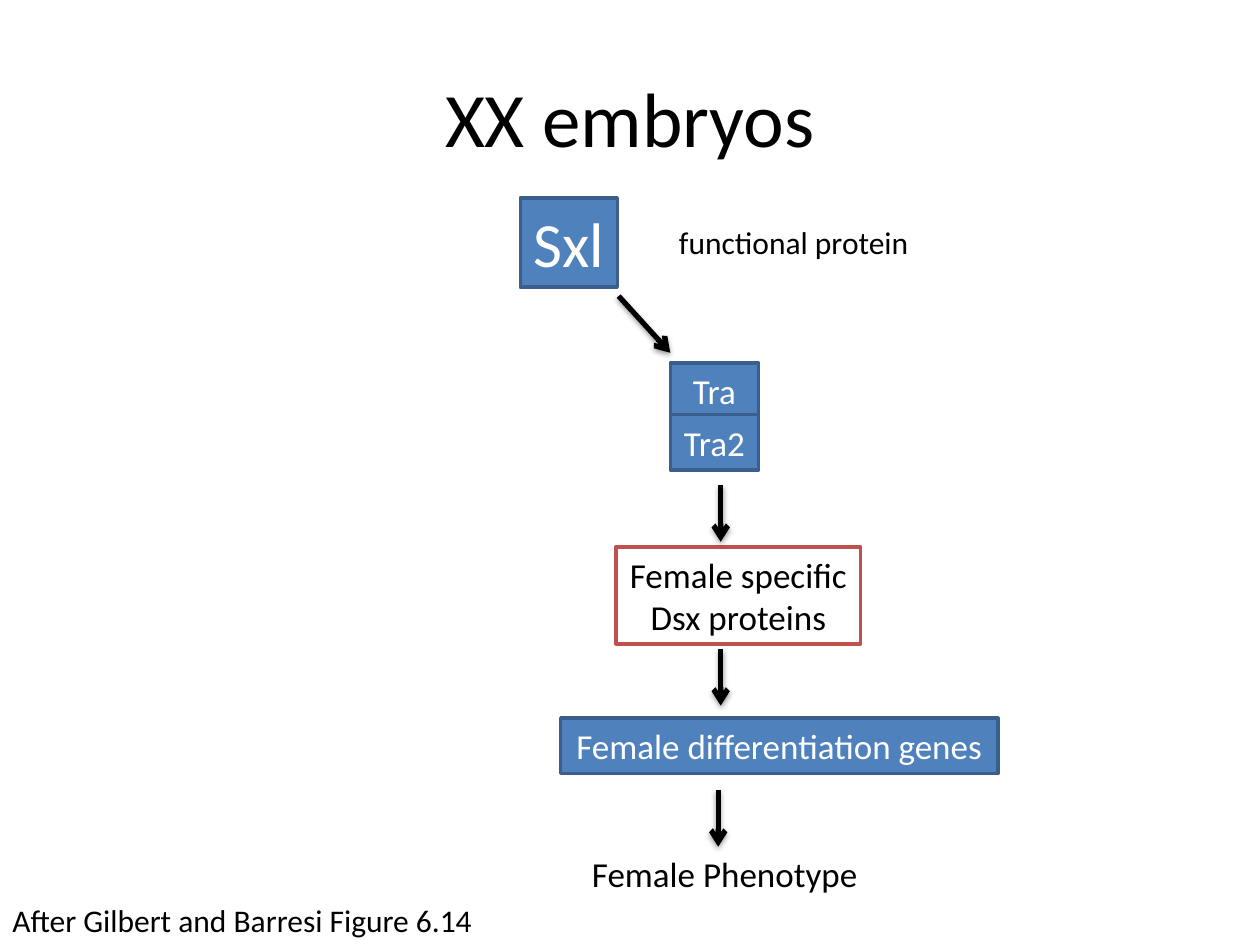
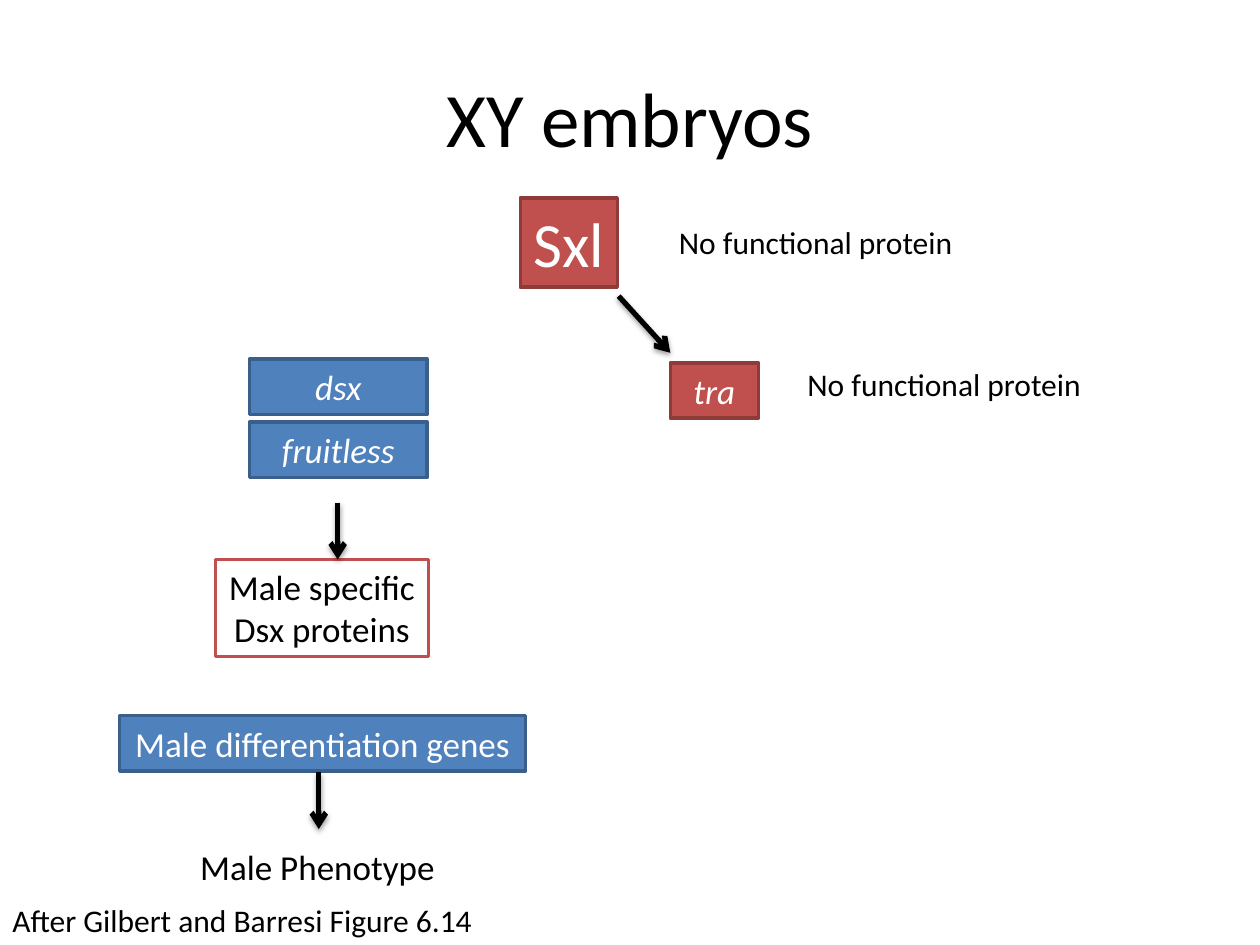
from lxml import etree
from pptx import Presentation
from pptx.dml.color import RGBColor
from pptx.enum import shapes, text
from pptx.oxml import ns
from pptx.util import Inches, Pt

FONT = "Calibri"
BLACK, WHITE = "000000", "FFFFFF"
ACTIVE = ("4F81BD", "3A5F8C", WHITE)
INACTIVE = ("C0504D", "8E3B39", WHITE)
PROTEIN = (WHITE, "C0504D", BLACK)
BODY, NOTE = 20, 18
ROW = 0.44
ARROW_DROP = 0.45


def color(value):
    """Turn a hex string into a colour."""
    return RGBColor.from_string(value)


def add_element(parent, tag, **attributes):
    """Append a DrawingML child element with the given attributes."""
    return etree.SubElement(parent, ns.qn(tag), attributes)


class Diagram:
    """Hold the deck, its style and the slide being drawn."""

    def __init__(self):
        """Start an empty deck."""
        self.deck = Presentation()
        self.deck.slide_width, self.deck.slide_height = Inches(10), Inches(7.5)
        self.page = None

    def set_words(self, box, words, size, ink, align, wrap=False, italic=False):
        """Put words in a box and format every run."""
        frame = box.text_frame
        frame.text = words
        frame.word_wrap = wrap
        frame.auto_size = text.MSO_AUTO_SIZE.SHAPE_TO_FIT_TEXT
        for para in frame.paragraphs:
            para.alignment = align
            for span in para.runs:
                span.font.name, span.font.size = FONT, Pt(size)
                span.font.color.rgb = color(ink)
                if italic:
                    span.font.italic = True

    def label(self, words, left, top, width, height=0.4, size=NOTE, align=text.PP_ALIGN.LEFT):
        """Add plain black text."""
        box = self.page.shapes.add_textbox(*map(Inches, (left, top, width, height)))
        self.set_words(box, words, size, BLACK, align)
        return box

    def block(self, words, left, top, width, height=ROW, style=ACTIVE, size=BODY, **options):
        """Add an outlined rectangle with centred text."""
        fill, line, ink = style
        box = self.page.shapes.add_shape(
            shapes.MSO_SHAPE.RECTANGLE, *map(Inches, (left, top, width, height)))
        box.shadow.inherit = False
        box.fill.solid()
        box.fill.fore_color.rgb = color(fill)
        box.line.color.rgb = color(line)
        box.line.width = Pt(2)
        self.set_words(box, words, size, ink, text.PP_ALIGN.CENTER, **options)

    def arrow(self, left, top, shift=0, drop=ARROW_DROP):
        """Add a shadowed arrow that runs down from a point."""
        arrow = self.page.shapes.add_connector(
            shapes.MSO_CONNECTOR.STRAIGHT,
            *map(Inches, (left, top, left + shift, top + drop)))
        arrow.line.color.rgb = color(BLACK)
        arrow.line.width = Pt(3)
        properties = arrow.element.spPr
        add_element(properties.find(ns.qn("a:ln")), "a:tailEnd", type="arrow")
        effects = add_element(properties, "a:effectLst")
        shadow = add_element(effects, "a:outerShdw", blurRad=str(Pt(3.1)), dist=str(Pt(1.6)),
                             dir="5400000", rotWithShape="0")
        tint = add_element(shadow, "a:srgbClr", val=BLACK)
        add_element(tint, "a:alpha", val="38000")

    def start(self, title, style, note, note_width):
        """Open a slide with its title, Sxl step and credit line."""
        self.page = self.deck.slides.add_slide(self.deck.slide_layouts[6])
        heading = self.label(title, 0.5, 0.3, 9, 1.25, 44, text.PP_ALIGN.CENTER)
        heading.text_frame.word_wrap = True
        heading.text_frame.auto_size = text.MSO_AUTO_SIZE.NONE
        heading.text_frame.vertical_anchor = text.MSO_ANCHOR.MIDDLE
        self.block("Sxl", 4.13, 1.57, 0.77, 0.71, style, 36)
        self.label(note, 5.29, 1.72, note_width)
        self.arrow(4.91, 2.35, shift=0.41)
        self.label("After Gilbert and Barresi Figure 6.14", 0, 7.1, 3.9)


def draw_female(diagram):
    """Draw the XX pathway."""
    diagram.start("XX embryos", ACTIVE, "functional protein", 2.05)
    for name, top in (("Tra", 2.88), ("Tra2", 3.29)):
        diagram.block(name, 5.32, top, 0.7, wrap=True)
    diagram.block("Female specific\nDsx proteins", 4.89, 4.34, 1.94, 0.77, PROTEIN)
    diagram.block("Female differentiation genes", 4.45, 5.7, 3.47)
    for left, top in ((5.72, 3.85), (5.72, 5.15), (5.7, 6.27)):
        diagram.arrow(left, top)
    diagram.label("Female Phenotype", 4.6, 6.72, 2.33, ROW, BODY)


def draw_male(diagram):
    """Draw the XY pathway."""
    missing = "No functional protein"
    diagram.start("XY embryos", INACTIVE, missing, 2.4)
    diagram.block("tra", 5.32, 2.88, 0.7, style=INACTIVE, wrap=True, italic=True)
    diagram.label(missing, 6.31, 2.85, 2.4)
    for name, top in (("dsx", 2.85), ("fruitless", 3.35)):
        diagram.block(name, 1.98, top, 1.41, wrap=True, italic=True)
    diagram.block("Male specific\nDsx proteins", 1.71, 4.44, 1.69, 0.77, PROTEIN)
    diagram.block("Male differentiation genes", 0.95, 5.68, 3.22)
    for left, top in ((2.68, 3.99), (2.53, 6.13)):
        diagram.arrow(left, top)
    diagram.label("Male Phenotype", 1.49, 6.66, 2.08, ROW, BODY)


def main():
    """Build and save both slides."""
    diagram = Diagram()
    draw_female(diagram)
    draw_male(diagram)
    diagram.deck.save("out.pptx")


if __name__ == "__main__":
    main()
